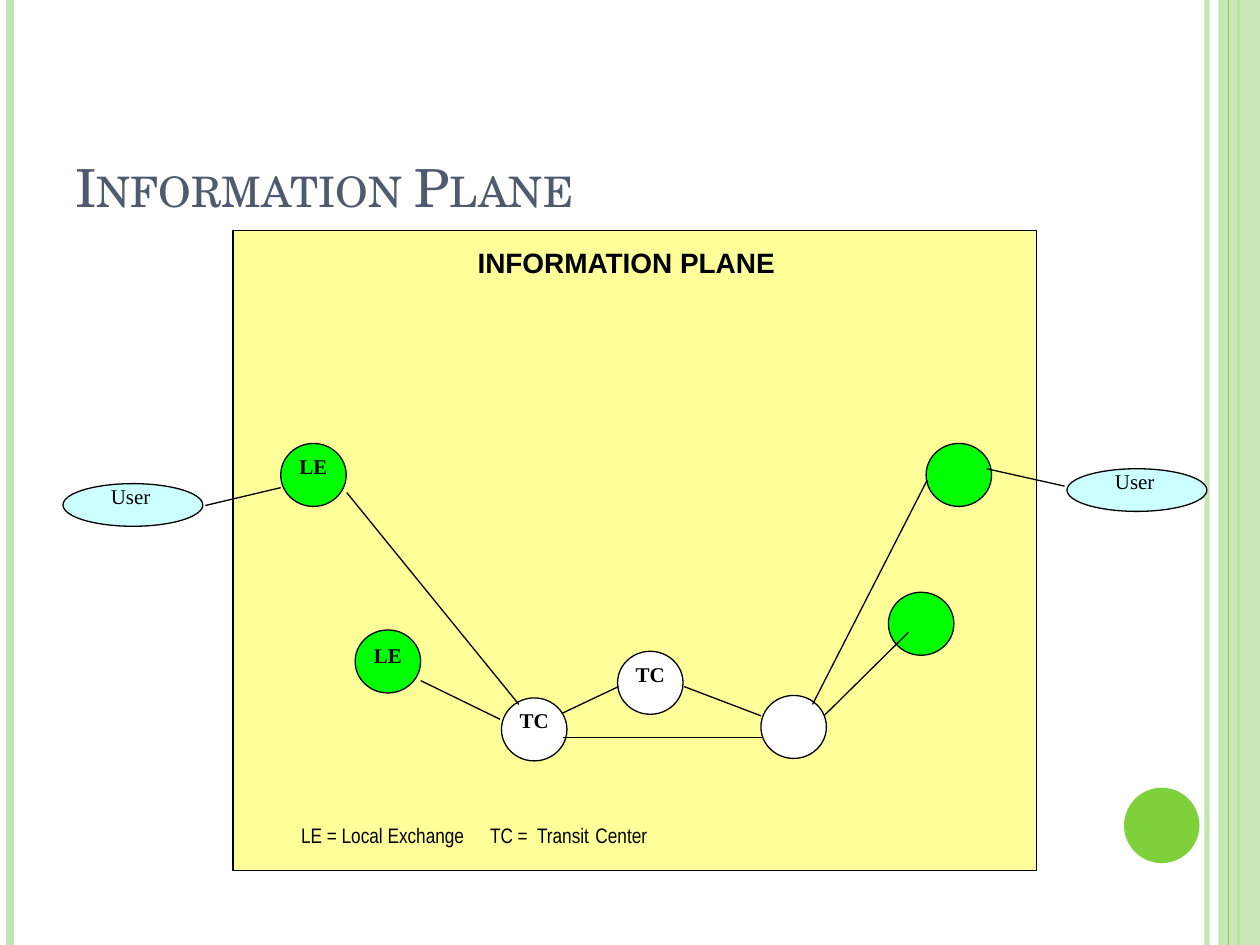
from dataclasses import dataclass

from lxml import etree
from pptx import Presentation
from pptx.dml.color import RGBColor
from pptx.enum.shapes import MSO_CONNECTOR, MSO_SHAPE
from pptx.enum.text import MSO_ANCHOR, PP_ALIGN
from pptx.oxml.ns import qn
from pptx.util import Cm, Pt

STRAIGHT = MSO_CONNECTOR.STRAIGHT
OVAL, RECTANGLE = MSO_SHAPE.OVAL, MSO_SHAPE.RECTANGLE
TOP, BOTTOM = MSO_ANCHOR.TOP, MSO_ANCHOR.BOTTOM
LEFT, CENTER = PP_ALIGN.LEFT, PP_ALIGN.CENTER


@dataclass(frozen=True)
class Theme:
    black: str = "000000"
    white: str = "FFFFFF"
    title: str = "4E5B6F"
    plane: str = "FFFF99"
    user: str = "CCFFFF"
    exchange: str = "00FF00"
    accent: str = "7FD13B"
    accent_light: str = "C0E5AF"
    title_font: str = "TeX Gyre Schola"
    heading_font: str = "Arial"
    legend_font: str = "Arial Narrow"
    label_font: str = "Times New Roman"
    title_size: int = 30
    heading_size: int = 16
    label_size: int = 12
    outline: float = 0.75


THEME = Theme()
SLIDE_SIZE = (25.4, 19.05)
NODE_SIZE = (1.32, 1.27)
USER_SIZE = (2.82, 0.86)

# Node: left, top, fill, label, label drop; all relative to the plane
NODES = [
    (0.96, 4.29, THEME.exchange, "LE", 0.15),
    (2.46, 8.05, THEME.exchange, "LE", 0.2),
    (5.41, 9.42, THEME.white, "TC", 0.15),
    (7.75, 8.48, THEME.white, "TC", 0.15),
    (10.64, 9.37, THEME.white, "", 0),
    (13.21, 7.29, THEME.exchange, "", 0),
    (13.97, 4.29, THEME.exchange, "", 0),
]
# Link: start x, start y, end x, end y; relative to the plane
LINKS = [
    (-0.56, 5.54, 0.96, 5.18),
    (15.19, 4.8, 16.76, 5.15),
    (2.29, 5.28, 5.76, 9.55),
    (3.78, 9.07, 5.38, 9.85),
    (6.63, 9.73, 7.77, 9.19),
    (9.09, 9.19, 10.64, 9.78),
    (6.65, 10.21, 10.69, 10.21),
    (11.91, 9.78, 13.61, 8.1),
    (13.99, 5.03, 11.68, 9.55),
]


def set_alpha(fill, percent):
    color = fill._xPr.find(".//" + qn("a:srgbClr"))
    etree.SubElement(color, qn("a:alpha")).set("val", str(percent * 1000))


def add_shape(slide, kind, box, fill, outlined=False):
    shape = slide.shapes.add_shape(kind, *map(Cm, box))
    shape.shadow.inherit = False
    shape.fill.solid()
    shape.fill.fore_color.rgb = RGBColor.from_string(fill)
    if outlined:
        shape.line.color.rgb = RGBColor.from_string(THEME.black)
        shape.line.width = Pt(THEME.outline)
    else:
        shape.line.fill.background()
    return shape


def add_line(slide, start, end, color=THEME.black, width=THEME.outline):
    line = slide.shapes.add_connector(STRAIGHT, *map(Cm, (*start, *end)))
    line.line.color.rgb = RGBColor.from_string(color)
    line.line.width = Pt(width)
    etree.SubElement(line._element.spPr, qn("a:effectLst"))
    return line


def write(shape, text, font, size, color=THEME.black, bold=False,
          align=CENTER, anchor=TOP, inset=0.05):
    """Fill the shape with one paragraph and return that paragraph."""
    frame = shape.text_frame
    frame.word_wrap = True
    frame.vertical_anchor = anchor
    frame.margin_left = frame.margin_right = Cm(inset)
    frame.margin_top = frame.margin_bottom = Cm(0.05)
    paragraph = frame.paragraphs[0]
    paragraph.add_run().text = text
    paragraph.alignment = align
    paragraph.font.name = font
    paragraph.font.size = Pt(size)
    paragraph.font.bold = bold
    paragraph.font.color.rgb = RGBColor.from_string(color)
    return paragraph


def add_label(slide, box, text, bold=False):
    label = slide.shapes.add_textbox(*map(Cm, box))
    write(label, text, THEME.label_font, THEME.label_size, bold=bold)


def add_side_bands(slide, width, height):
    def vertical(x, color, line_width):
        return add_line(slide, (x, 0), (x, height), color, line_width)

    edge = vertical(width - 1.07, THEME.accent_light, 3)
    set_alpha(edge.line.fill, 93)
    vertical(0.2, THEME.accent_light, 4.5)
    vertical(width - 0.43, THEME.accent, 1.5)
    band = add_shape(slide, RECTANGLE, (width - 0.84, 0, 0.84, height),
                     THEME.accent_light)
    set_alpha(band.fill, 87)
    vertical(width - 0.64, THEME.accent, 0.75)
    add_shape(slide, OVAL, (width - 2.74, 15.88, 1.52, 1.52), THEME.accent)


def add_title(slide, box):
    title = slide.shapes.add_textbox(*map(Cm, box))
    paragraph = write(title, "Information Plane", THEME.title_font,
                      THEME.title_size, THEME.title, align=LEFT,
                      anchor=BOTTOM, inset=0.25)
    paragraph.runs[0]._r.get_or_add_rPr().set("cap", "small")


def add_user(slide, left, top):
    add_shape(slide, OVAL, (left, top, *USER_SIZE), THEME.user, True)
    add_label(slide, (left + 0.36, top - 0.05, 2.01, 0.97), "User")


def add_legend(slide, box):
    legend = add_shape(slide, RECTANGLE, box, THEME.plane)
    paragraph = write(legend, "LE = Local Exchange\tTC =  Transit",
                      THEME.legend_font, THEME.label_size, align=LEFT)
    paragraph.line_spacing = 1.12
    gap = paragraph.add_run()
    gap.text = " "
    gap.font.size = Pt(THEME.heading_size)
    paragraph.add_run().text = "Center"


def add_plane(slide, left, top, width, height):
    add_shape(slide, RECTANGLE, (left, top, width, height), THEME.plane, True)
    heading = add_shape(slide, RECTANGLE,
                        (left + 3.38, top + 0.25, 9.09, 1.12), THEME.plane)
    write(heading, "INFORMATION PLANE", THEME.heading_font,
          THEME.heading_size, bold=True)
    add_legend(slide, (left + 1.32, top + 11.66, 13.69, 1.04))
    for x, y, fill, text, drop in NODES:
        add_shape(slide, OVAL, (left + x, top + y, *NODE_SIZE), fill, True)
        if text:
            add_label(slide, (left + x + 0.06, top + y + drop, 1.2, 0.97),
                      text, bold=True)
    for x1, y1, x2, y2 in LINKS:
        add_line(slide, (left + x1, top + y1), (left + x2, top + y2))


def main():
    presentation = Presentation()
    presentation.slide_width, presentation.slide_height = map(Cm, SLIDE_SIZE)
    slide = presentation.slides.add_slide(presentation.slide_layouts[6])
    add_side_bands(slide, *SLIDE_SIZE)
    add_title(slide, (1.27, 1.27, 22.86, 3.18))
    add_plane(slide, 4.7, 4.65, 16.2, 12.9)
    add_user(slide, 1.27, 9.75)
    add_user(slide, 21.51, 9.45)
    presentation.save("out.pptx")


if __name__ == "__main__":
    main()
